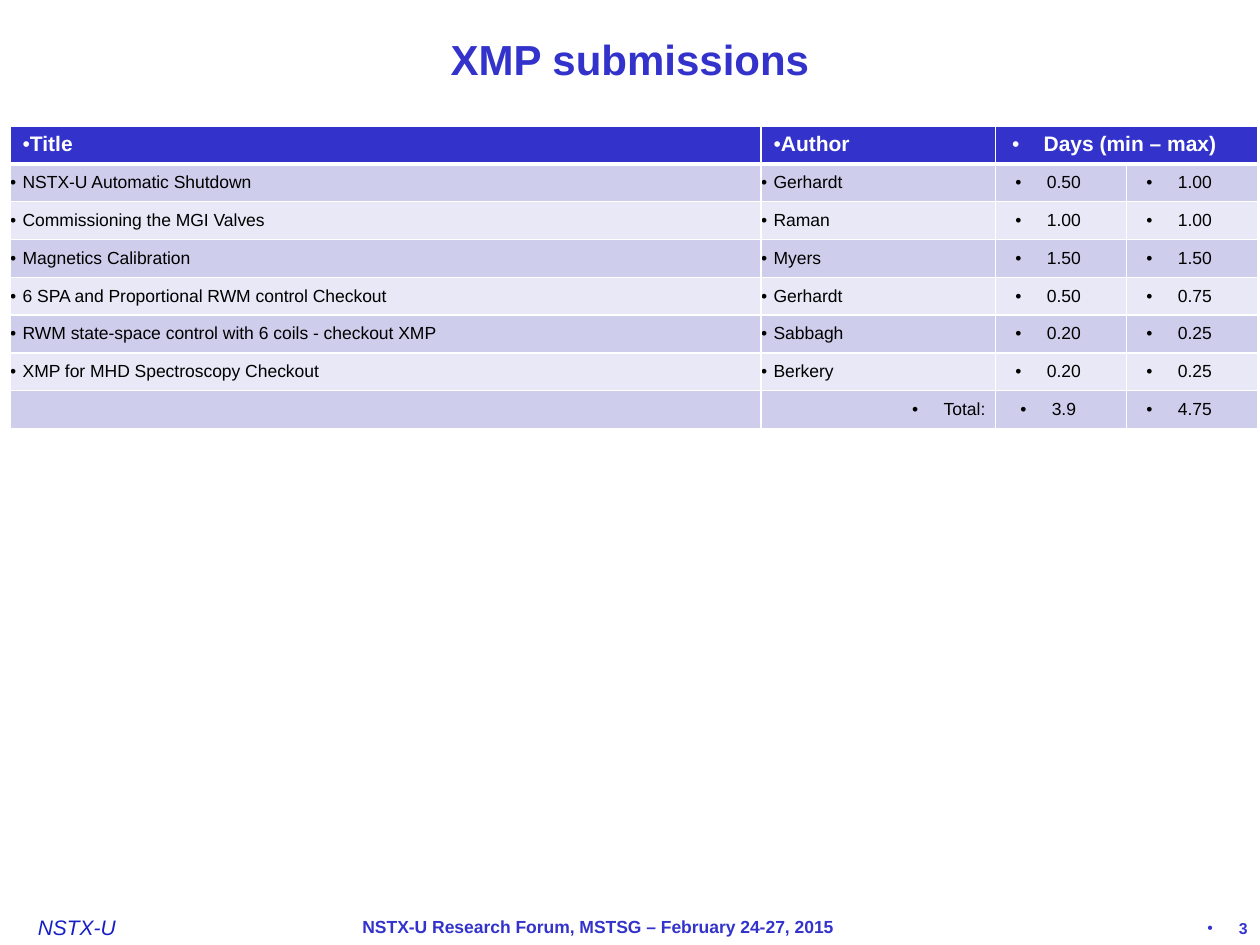
from lxml import etree
from pptx import Presentation
from pptx import util as u
from pptx.dml.color import RGBColor
from pptx.enum import text
from pptx.oxml.ns import qn

BLUE = RGBColor(0x33, 0x33, 0xCC)
LOGO_BLUE = RGBColor(0x17, 0x1F, 0xC7)
WHITE = RGBColor(0xFF, 0xFF, 0xFF)
BLACK = RGBColor(0, 0, 0)
BANDS = [RGBColor(0xE8, 0xE8, 0xF6), RGBColor(0xCE, 0xCE, 0xEC)]
LEFT, CENTER, RIGHT = text.PP_ALIGN.LEFT, text.PP_ALIGN.CENTER, text.PP_ALIGN.RIGHT

prs = Presentation()
prs.slide_width, prs.slide_height = u.Inches(10), u.Inches(7.5)
s = prs.slides.add_slide(prs.slide_layouts[6])


def write(tf, words, size, color, bold, align, bullet=None):
    """Fill a frame with one line; bullet is (left margin, first-line indent)."""
    p = tf.paragraphs[0]
    p.text = words
    p.alignment = align
    if bullet:
        pPr = p._p.get_or_add_pPr()
        pPr.set("marL", str(u.Inches(bullet[0])))
        pPr.set("indent", str(u.Inches(bullet[1])))
        etree.SubElement(pPr, qn("a:buFont"), typeface="Arial")
        etree.SubElement(pPr, qn("a:buChar"), char="•")
    r = p.runs[0]
    r.font.name, r.font.size = "Arial", u.Pt(size)
    r.font.bold, r.font.color.rgb = bold, color
    return p


def border(cell, bottom):
    """White lines on all four sides, with a given width below."""
    tcPr = cell._tc.get_or_add_tcPr()
    for i, (side, width) in enumerate([("L", 1), ("R", 1), ("T", 1), ("B", bottom)]):
        ln = etree.Element(qn("a:ln" + side), w=str(u.Pt(width)))
        fill = etree.SubElement(ln, qn("a:solidFill"))
        etree.SubElement(fill, qn("a:srgbClr"), val=str(WHITE))
        tcPr.insert(i, ln)


# Title, footer and page number
HANG = (0, -0.25)
boxes = [
    ("NSTX-U", (0.3, 7.26, 0.78, 0.2), 12, LOGO_BLUE, False, LEFT, None, 0),
    ("NSTX-U Research Forum, MSTSG – February 24-27, 2015",
     (0.83, 7.2, 7.83, 0.3), 10, BLUE, True, CENTER, None, 0),
    ("XMP submissions", (0, 0.02, 10, 0.89), 24, BLUE, True, CENTER, None, 0.1),
    ("3", (9.17, 7.28, 0.83, 0.17), 9, BLUE, True, RIGHT, HANG, 0.1),
]
for words, place, size, color, bold, align, bullet, inset in boxes:
    tf = s.shapes.add_textbox(*[u.Inches(v) for v in place]).text_frame
    tf.word_wrap = True
    tf.vertical_anchor = text.MSO_ANCHOR.MIDDLE
    tf.margin_left = tf.margin_right = u.Inches(inset)
    tf.margin_top = tf.margin_bottom = 0
    p = write(tf, words, size, color, bold, align, bullet)
    p.runs[0].font.italic = words == "NSTX-U"

# Submissions table
rows = [
    ("Title", "Author", "Days (min – max)", ""),
    ("NSTX-U Automatic Shutdown", "Gerhardt", "0.50", "1.00"),
    ("Commissioning the MGI Valves", "Raman", "1.00", "1.00"),
    ("Magnetics Calibration", "Myers", "1.50", "1.50"),
    ("6 SPA and Proportional RWM control Checkout", "Gerhardt", "0.50", "0.75"),
    ("RWM state-space control with 6 coils - checkout XMP", "Sabbagh", "0.20", "0.25"),
    ("XMP for MHD Spectroscopy Checkout", "Berkery", "0.20", "0.25"),
    ("", "Total:", "3.9", "4.75"),
]
HEAD_H, ROW_H = 0.28, 0.3
widths = [5.96, 1.86, 1.04, 1.04]
height = HEAD_H + ROW_H * (len(rows) - 1)
tbl = s.shapes.add_table(len(rows), len(widths), u.Inches(0.08), u.Inches(1),
                         u.Inches(sum(widths)), u.Inches(height)).table
for col, width in zip(tbl.columns, widths):
    col.width = u.Inches(width)
tbl.cell(0, 2).merge(tbl.cell(0, 3))

for i, row in enumerate(rows):
    head = i == 0
    tbl.rows[i].height = u.Inches(HEAD_H if head else ROW_H)
    for j, words in enumerate(row):
        c = tbl.cell(i, j)
        c.fill.solid()
        c.fill.fore_color.rgb = BLUE if head else BANDS[i % 2]
        border(c, 3 if head else 1)
        if not head:
            c.vertical_anchor = text.MSO_ANCHOR.MIDDLE
            c.margin_left = c.margin_right = c.margin_top = c.margin_bottom = 0
        if not words:
            continue
        align, bullet = (CENTER, HANG) if j > 1 else (LEFT, (0, 0) if head else (0.1, -0.1))
        if words == "Total:":
            align, bullet = RIGHT, HANG
            c.margin_right = u.Inches(0.08)
        write(c.text_frame, words, 12 if head else 10,
              WHITE if head else BLACK, head, align, bullet)

prs.save("out.pptx")
